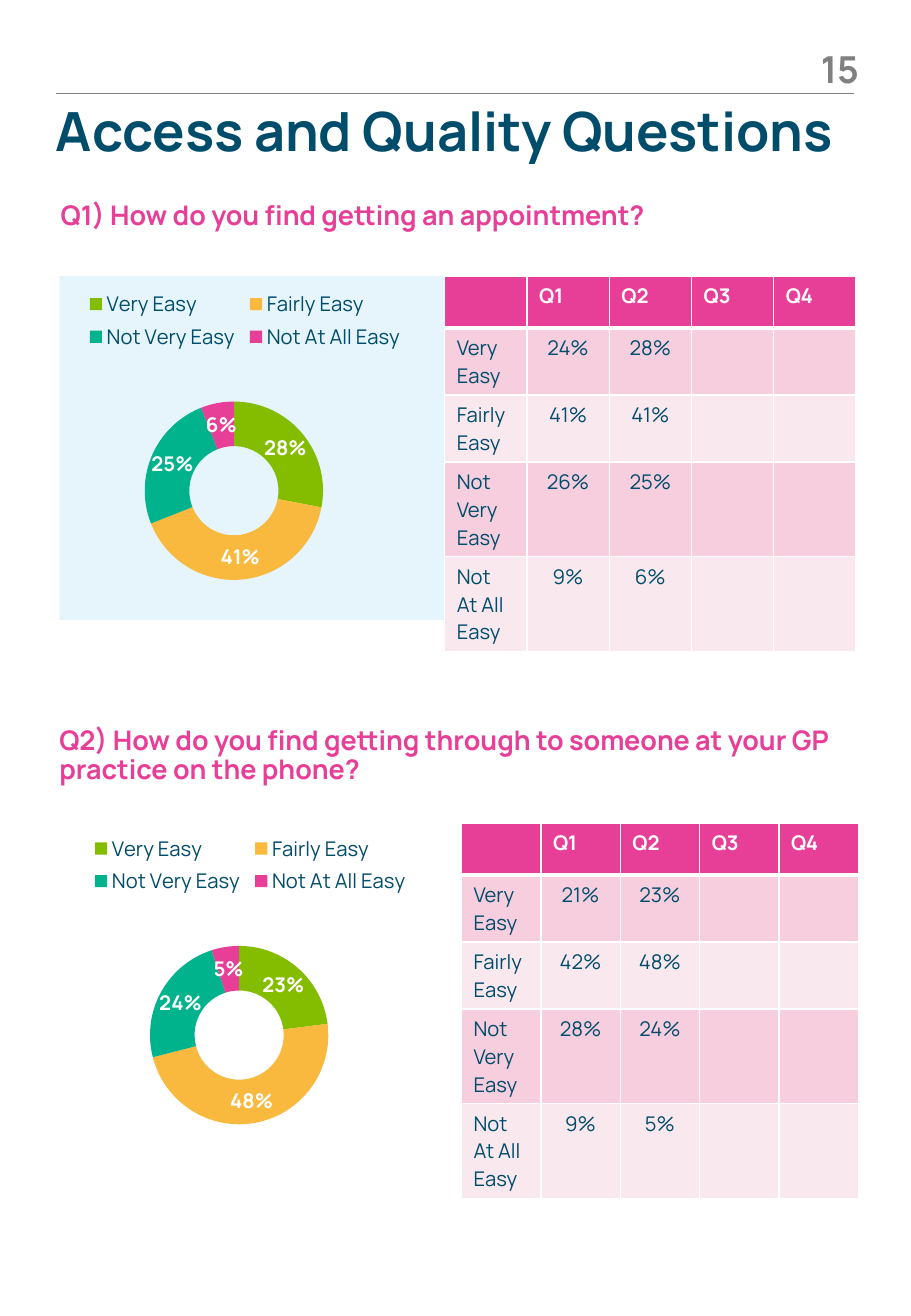
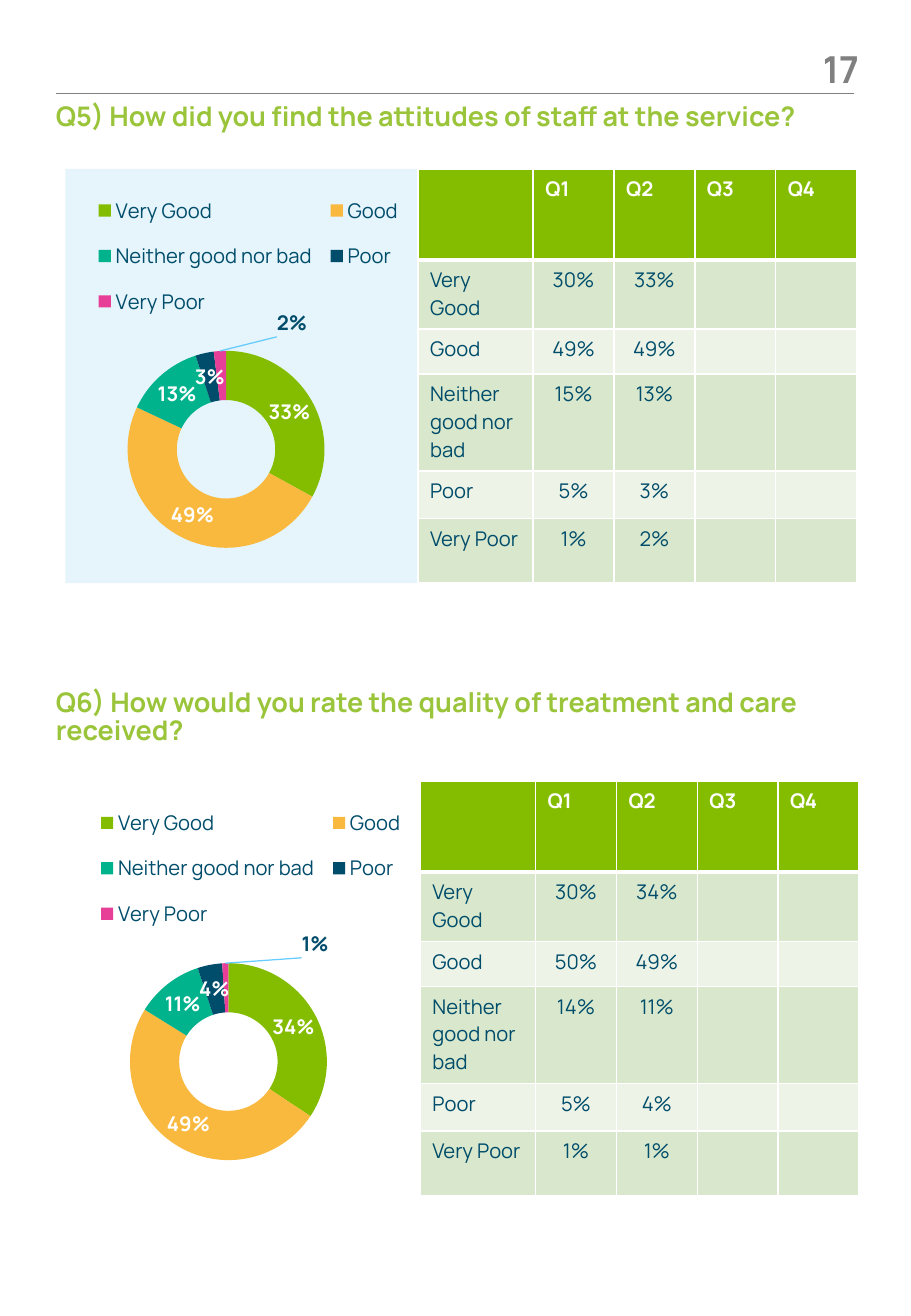
import dataclasses

import lxml.etree
import pptx
import pptx.chart.data
import pptx.dml.color
import pptx.enum.chart
import pptx.enum.shapes
import pptx.enum.text
import pptx.oxml
import pptx.oxml.ns
import pptx.util

Cm = pptx.util.Cm
qn = pptx.oxml.ns.qn


@dataclasses.dataclass(frozen=True)
class Theme:
    font: str = "Manrope"
    navy: str = "004C6B"
    grey: str = "808080"
    white: str = "FFFFFF"
    panel: str = "E5F5FB"
    leader: str = "66CCFF"
    green: str = "84BD00"
    amber: str = "F9B93E"
    teal: str = "00B38C"
    pink: str = "E73E97"
    lime: str = "9AC43A"
    pink_bands: tuple = ("F6CEDD", "FAE8EF")
    green_bands: tuple = ("D9E8CC", "EDF4E7")
    title: int = 32
    number: int = 22
    heading: int = 16
    body: int = 12
    chart: int = 10


THEME = Theme()


@dataclasses.dataclass(frozen=True)
class Survey:
    answers: tuple
    slices: tuple
    header: str
    bands: tuple
    heading: str
    rows: tuple
    chart_height: float
    plot: tuple
    legend: tuple


EASE = Survey(
    answers=("Very Easy", "Fairly Easy", "Not Very Easy", "Not At All Easy"),
    slices=(THEME.green, THEME.amber, THEME.teal, THEME.pink),
    header=THEME.pink, bands=THEME.pink_bands, heading=THEME.pink,
    rows=(1.09, 1.4, 1.4, 1.98, 1.98), chart_height=7.34,
    plot=(0.23, 0.31, 0.48, 0.59), legend=(0.06, 0.02, 0.88, 0.2))

QUALITY = Survey(
    answers=("Very Good", "Good", "Neither good nor bad", "Poor", "Very Poor"),
    slices=(THEME.green, THEME.amber, THEME.teal, THEME.navy, THEME.pink),
    header=THEME.green, bands=THEME.green_bands, heading=THEME.lime,
    rows=(1.9, 1.45, 0.94, 2.03, 0.99, 1.35), chart_height=9.19,
    plot=(0.18, 0.41, 0.53, 0.45), legend=(0.07, 0.02, 0.87, 0.35))


def rgb(color):
    return pptx.dml.color.RGBColor.from_string(color)


def style_font(font, size, color, bold=False):
    font.name = THEME.font
    font.size = pptx.util.Pt(size)
    font.bold = bold
    font.color.rgb = rgb(color)


def add_text(page, text, at, *, size, color, align="LEFT", anchor="TOP", spacing=None):
    box = page.shapes.add_textbox(*map(Cm, at))
    frame = box.text_frame
    frame.word_wrap = True
    frame.margin_left = frame.margin_right = frame.margin_top = frame.margin_bottom = 0
    frame.vertical_anchor = getattr(pptx.enum.text.MSO_ANCHOR, anchor)
    para = frame.paragraphs[0]
    para.alignment = getattr(pptx.enum.text.PP_ALIGN, align)
    if spacing:
        para.line_spacing = pptx.util.Pt(spacing)
    span = para.add_run()
    span.text = text
    style_font(span.font, size, color, bold=True)


def add_heading(page, text, at, survey):
    add_text(page, text, at, size=THEME.heading, color=survey.heading, spacing=17)


def add_panel(page, at):
    panel = page.shapes.add_shape(pptx.enum.shapes.MSO_SHAPE.RECTANGLE, *map(Cm, at))
    panel.shadow.inherit = False
    panel.fill.solid()
    panel.fill.fore_color.rgb = rgb(THEME.panel)
    panel.line.fill.background()


def add_page(deck, number):
    page = deck.slides.add_slide(deck.slide_layouts[6])
    rule = page.shapes.add_connector(
        pptx.enum.shapes.MSO_CONNECTOR.STRAIGHT, Cm(1.17), Cm(1.96), Cm(17.86), Cm(1.96))
    rule.line.color.rgb = rgb(THEME.grey)
    rule.line.width = pptx.util.Pt(0.75)
    lxml.etree.SubElement(rule.element.spPr, qn("a:effectLst"))
    add_text(page, str(number), (16.33, 0.94, 1.63, 0.99), size=THEME.number,
             color=THEME.grey, align="RIGHT", anchor="MIDDLE")
    return page


def make_layout(**values):
    layout = lxml.etree.Element(qn("c:layout"))
    manual = lxml.etree.SubElement(layout, qn("c:manualLayout"))
    for name, value in values.items():
        lxml.etree.SubElement(manual, qn("c:" + name), val=str(value))
    return layout


def place(part, layout, before):
    for old in part.findall(qn("c:layout")):
        part.remove(old)
    part.insert(before, layout)


def frame_layout(frame, **extra):
    left, top, width, height = frame
    return make_layout(**extra, xMode="edge", yMode="edge", x=left, y=top, w=width, h=height)


def move_last_label(chart, series, index, offset):
    style_font(series.points[index].data_label.font, THEME.body, THEME.navy, bold=True)
    label = chart.element.find(".//" + qn("c:ser")).find(".//" + qn("c:dLbl"))
    label.find(qn("c:showVal")).set("val", "0")
    label.find(qn("c:showPercent")).set("val", "1")
    place(label, make_layout(x=offset[0], y=offset[1]), 1)
    labels = label.getparent()
    for old in labels.findall(qn("c:showLeaderLines")):
        labels.remove(old)
    lxml.etree.SubElement(labels, qn("c:showLeaderLines"), val="1")
    labels.append(pptx.oxml.parse_xml(
        f'<c:leaderLines {pptx.oxml.ns.nsdecls("c", "a")}><c:spPr><a:ln w="9525"><a:solidFill>'
        f'<a:srgbClr val="{THEME.leader}"/></a:solidFill></a:ln></c:spPr></c:leaderLines>'))


def add_doughnut(page, survey, values, corner, label_offset=None):
    data = pptx.chart.data.CategoryChartData()
    data.categories = survey.answers
    data.add_series("Series 1", values)
    chart = page.shapes.add_chart(
        pptx.enum.chart.XL_CHART_TYPE.DOUGHNUT, *map(Cm, corner), Cm(7.77),
        Cm(survey.chart_height), data).chart
    style_font(chart.font, THEME.chart, THEME.navy)
    chart.has_title = False
    chart.has_legend = True
    chart.legend.position = pptx.enum.chart.XL_LEGEND_POSITION.TOP
    chart.legend.include_in_layout = False
    style_font(chart.legend.font, THEME.body, THEME.navy)
    place(chart.element.find(".//" + qn("c:legend")), frame_layout(survey.legend), 1)
    place(chart.element.find(".//" + qn("c:plotArea")),
          frame_layout(survey.plot, layoutTarget="inner"), 0)
    chart.plots[0].vary_by_categories = True
    series = chart.plots[0].series[0]
    for index, color in enumerate(survey.slices):
        fill = series.points[index].format.fill
        fill.solid()
        fill.fore_color.rgb = rgb(color)
    labels = series.data_labels
    labels.show_value = False
    labels.show_percentage = True
    style_font(labels.font, THEME.body, THEME.white, bold=True)
    if label_offset:
        move_last_label(chart, series, len(values) - 1, label_offset)


def border_cell(cell, bottom):
    properties = cell._tc.get_or_add_tcPr()
    widths = {"lnL": 1, "lnR": 1, "lnT": 1, "lnB": bottom}
    for index, (side, width) in enumerate(widths.items()):
        properties.insert(index, pptx.oxml.parse_xml(
            f'<a:{side} {pptx.oxml.ns.nsdecls("a")} w="{pptx.util.Pt(width)}"><a:solidFill>'
            f'<a:srgbClr val="{THEME.white}"/></a:solidFill></a:{side}>'))


def fill_cell(cell, text, *, fill, color, bold=False, centred=False, bottom=1):
    cell.fill.solid()
    cell.fill.fore_color.rgb = rgb(fill)
    border_cell(cell, bottom)
    para = cell.text_frame.paragraphs[0]
    if centred:
        para.alignment = pptx.enum.text.PP_ALIGN.CENTER
    if text:
        span = para.add_run()
        span.text = text
        style_font(span.font, THEME.body, color, bold)
    else:
        end = lxml.etree.SubElement(para._p, qn("a:endParaRPr"), sz=str(THEME.body * 100))
        lxml.etree.SubElement(end, qn("a:latin"), typeface=THEME.font)


def add_results(page, survey, quarters, corner, columns):
    lines = [("", "Q1", "Q2", "Q3", "Q4")]
    for answer, *shares in zip(survey.answers, *quarters):
        lines.append((answer, *(f"{share}%" for share in shares), "", ""))
    table = page.shapes.add_table(
        len(lines), len(columns), *map(Cm, corner), Cm(sum(columns)), Cm(sum(survey.rows))).table
    for column, width in zip(table.columns, columns):
        column.width = Cm(width)
    for row, height in zip(table.rows, survey.rows):
        row.height = Cm(height)
    for r, line in enumerate(lines):
        for c, text in enumerate(line):
            if r == 0:
                fill_cell(table.cell(r, c), text, fill=survey.header, color=THEME.white,
                          bold=True, bottom=3)
            else:
                fill_cell(table.cell(r, c), text, fill=survey.bands[(r - 1) % 2],
                          color=THEME.navy, centred=c > 0)


def add_question(page, survey, heading, heading_at, quarters, chart_at, table_at, columns,
                 label_offset=None):
    add_heading(page, heading, heading_at, survey)
    add_doughnut(page, survey, quarters[-1], chart_at, label_offset)
    add_results(page, survey, quarters, table_at, columns)


def main():
    deck = pptx.Presentation()
    deck.slide_width, deck.slide_height = Cm(19.05), Cm(27.51)

    page = add_page(deck, 15)
    add_panel(page, (1.24, 5.77, 16.59, 7.19))
    add_text(page, "Access and Quality Questions", (1.17, 2.03, 17.55, 1.27),
             size=THEME.title, color=THEME.navy)
    add_question(page, EASE, "Q1) How do you find getting an appointment?",
                 (1.27, 4.22, 13.21, 0.61), ((24, 41, 26, 9), (28, 41, 25, 6)),
                 (1.24, 5.82), (9.3, 5.77), (1.72,) * 5)
    add_question(page, EASE,
                 "Q2) How do you find getting through to someone at your GP practice on the phone?",
                 (1.24, 15.21, 16.48, 0.3), ((21, 42, 28, 9), (23, 48, 24, 5)),
                 (1.35, 17.2), (9.65, 17.2), (1.66,) * 5)

    page = add_page(deck, 17)
    add_panel(page, (1.37, 3.53, 16.54, 8.66))
    columns = (2.41,) + (1.69,) * 4
    add_question(page, QUALITY, "Q5) How did you find the attitudes of staff at the service?",
                 (1.17, 2.16, 16.54, 0.61), ((30, 49, 15, 5, 1), (33, 49, 13, 3, 2)),
                 (1.27, 3.56), (8.74, 3.53), columns, label_offset=(0.19, -0.12))
    add_question(page, QUALITY,
                 "Q6) How would you rate the quality of treatment and care received?",
                 (1.17, 14.4, 17.88, 0.64), ((30, 50, 14, 5, 1), (34, 49, 11, 4, 1)),
                 (1.32, 16.36), (8.79, 16.33), columns, label_offset=(0.24, -0.1))
    deck.save("out.pptx")


if __name__ == "__main__":
    main()
